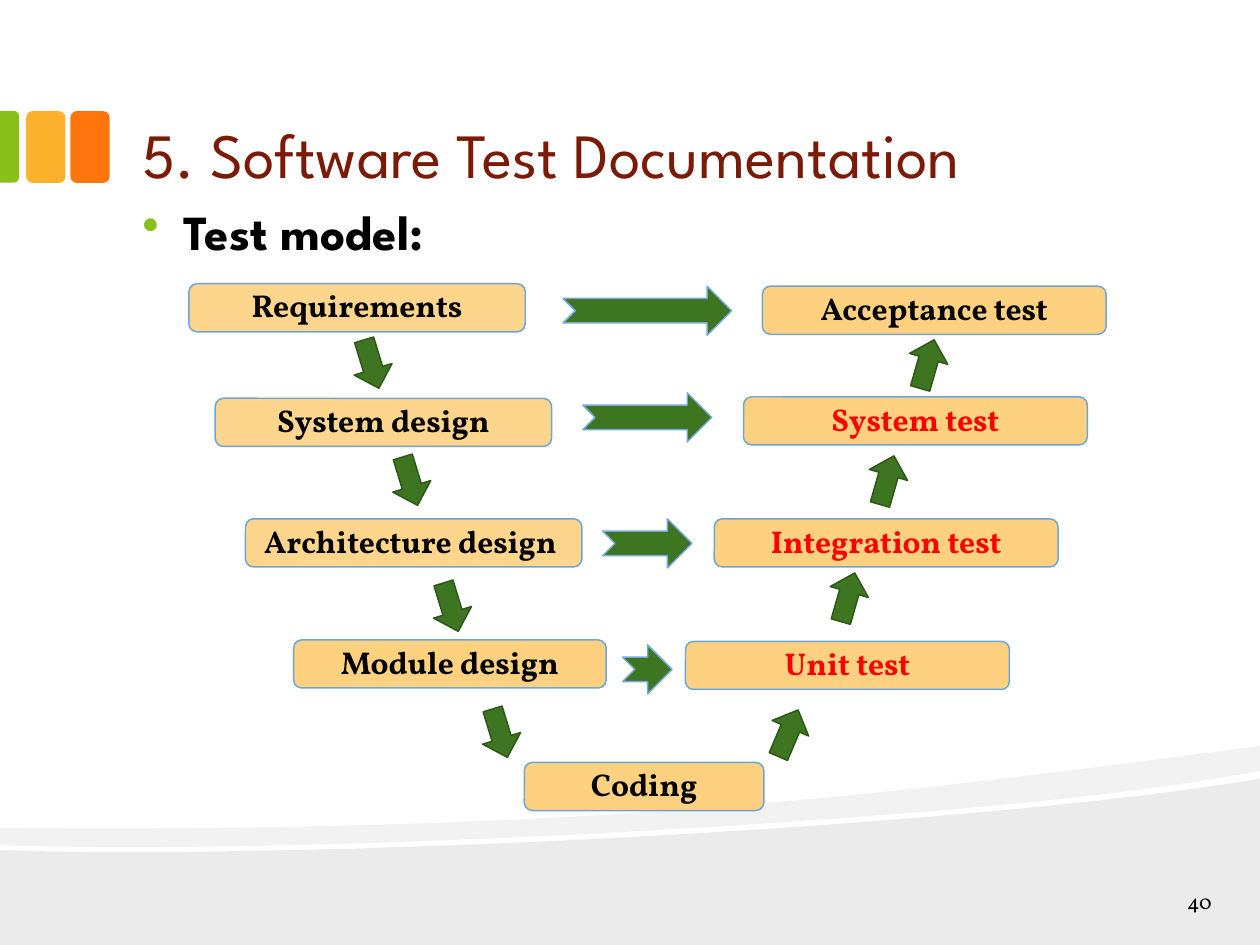
"""Build a slide with the V-shaped software test model."""
from lxml import etree
from pptx import Presentation
from pptx.dml.color import RGBColor
from pptx.enum.shapes import MSO_SHAPE
from pptx.enum.text import MSO_ANCHOR, PP_ALIGN
from pptx.oxml.ns import qn
from pptx.util import Cm, Pt

ROUND = MSO_SHAPE.ROUNDED_RECTANGLE
TAB = MSO_SHAPE.ROUND_2_SAME_RECTANGLE
DOWN = MSO_SHAPE.DOWN_ARROW
NOTCH = MSO_SHAPE.NOTCHED_RIGHT_ARROW
TOP, MIDDLE, BOTTOM = MSO_ANCHOR.TOP, MSO_ANCHOR.MIDDLE, MSO_ANCHOR.BOTTOM
LEFT, CENTER, RIGHT = PP_ALIGN.LEFT, PP_ALIGN.CENTER, PP_ALIGN.RIGHT

BLACK = RGBColor(0x00, 0x00, 0x00)
RED = RGBColor(0xFF, 0x00, 0x00)
MAROON = RGBColor(0x7A, 0x1A, 0x07)
ORANGE = RGBColor(0xFE, 0x75, 0x0E)
YELLOW = RGBColor(0xFC, 0xB2, 0x2C)
LIME = RGBColor(0x89, 0xC0, 0x1C)
SAND = RGBColor(0xFD, 0xD1, 0x80)
BLUE = RGBColor(0x6C, 0xA5, 0xD8)
SKY = RGBColor(0x74, 0xA9, 0xDA)
GREEN = RGBColor(0x3E, 0x75, 0x20)
FOREST = RGBColor(0x2E, 0x57, 0x18)

WIDE, HIGH = 25.4, 19.05
HEAD, BODY = "League Spartan", "Vollkorn"

STEPS = [
    ("Requirements", 3.81, 5.72, 6.78, 90),
    ("System design", 4.34, 8.03, 6.78, 90),
    ("Architecture design ", 4.95, 10.46, 6.78, 90),
    ("Module design", 5.92, 12.9, 6.3, 100),
    ("Coding", 10.57, 15.37, 4.83, 100),
]
TESTS = [
    ("Acceptance test", 15.37, 5.77, 6.93, BLACK),
    ("System test", 14.99, 8, 6.93, RED),
    ("Integration test", 14.4, 10.46, 6.93, RED),
    ("Unit test", 13.82, 12.93, 6.53, RED),
]
FALLS = [(7.09, 6.83), (7.87, 9.19), (8.69, 11.73), (9.68, 14.27)]
CLIMBS = [(18.29, 6.83, 196), (17.48, 9.17, 196), (16.69, 11.53, 196),
          (15.49, 14.27, 203)]
LINKS = [5.77, 7.92, 10.46, 13]


def curve(a, b, c, d, count=24):
    """Return points along a cubic curve."""
    spots = []
    for step in range(count + 1):
        t = step / count
        u = 1 - t
        spots.append(tuple(
            u**3 * p + 3 * u * u * t * q + 3 * u * t * t * r + t**3 * s
            for p, q, r, s in zip(a, b, c, d)))
    return spots


class Deck:
    """Hold the style and the current slide."""

    def __init__(self):
        self.show = Presentation()
        self.show.slide_width, self.show.slide_height = Cm(WIDE), Cm(HIGH)
        self.slide = self.show.slides.add_slide(self.show.slide_layouts[6])
        self.shapes = self.slide.shapes

    def paint(self, shape, fill, line=None, alpha=100):
        """Set fill, line and opacity, and drop the shadow."""
        shape.shadow.inherit = False
        shape.fill.solid()
        shape.fill.fore_color.rgb = fill
        if alpha < 100:
            tint = shape.element.spPr.find(qn("a:solidFill"))[0]
            etree.SubElement(tint, qn("a:alpha")).set("val", str(alpha * 1000))
        if line is None:
            shape.line.fill.background()
        else:
            shape.line.color.rgb = line
            shape.line.width = Pt(0.85)

    def wave(self, spots, alpha):
        """Draw a closed, sheer black outline."""
        first, *rest = [(Cm(x), Cm(y)) for x, y in spots]
        pen = self.shapes.build_freeform(*first, scale=1.0)
        pen.add_line_segments(rest, close=True)
        self.paint(pen.convert_to_shape(), BLACK, alpha=alpha)

    def block(self, kind, place, fill, line=None, turn=0, alpha=100):
        """Add a painted preset shape."""
        shape = self.shapes.add_shape(kind, *map(Cm, place))
        shape.rotation = turn
        self.paint(shape, fill, line, alpha)
        return shape

    def letter(self, shape, text, font, size, color, align, anchor, bold=False,
               inset=0.33):
        """Fill a shape with one styled paragraph."""
        frame = shape.text_frame
        frame.text = text
        frame.word_wrap = True
        frame.vertical_anchor = anchor
        frame.margin_left = frame.margin_right = Cm(inset)
        frame.margin_top = frame.margin_bottom = Cm(0.18)
        line = frame.paragraphs[0]
        line.alignment = align
        style = line.runs[0].font
        style.name, style.size, style.bold = font, Pt(size), bold
        style.color.rgb = color
        return line

    def label(self, place, *style, **more):
        """Add a text box."""
        return self.letter(self.shapes.add_textbox(*map(Cm, place)),
                           *style, **more)

    def bullet(self, line, color):
        """Give a paragraph a hanging bullet."""
        props = line._p.get_or_add_pPr()
        props.set("marL", str(Cm(0.84)))
        props.set("indent", str(-Cm(0.84)))
        tint = etree.SubElement(props, qn("a:buClr"))
        etree.SubElement(tint, qn("a:srgbClr")).set("val", str(color))
        etree.SubElement(props, qn("a:buChar")).set("char", "•")

    def box(self, text, x, y, width, color=BLACK, alpha=100):
        """Add a named stage of the model."""
        shape = self.block(ROUND, (x, y, width, 0.97), SAND, BLUE, alpha=alpha)
        line = self.letter(shape, text, BODY, 18, color, CENTER, MIDDLE,
                           bold=True, inset=0.18)
        line.line_spacing = 0.9


def main():
    deck = Deck()
    deck.wave([(WIDE, HIGH), (0, HIGH)]
              + curve((0, 17.14), (6.71, 17.35), (19.86, 16.64), (WIDE, 15.7)), 8)
    deck.wave(curve((0, 16.69), (12.42, 16.81), (18.49, 15.93), (WIDE, 15.04))
              + curve((WIDE, 15.54), (23.93, 15.82), (21.89, 16.08), (19.61, 16.28))
              + curve((19.61, 16.28), (13.28, 16.84), (4.9, 17.2), (0, 17.04)), 5)

    for x, color in ((1.42, ORANGE), (0.53, YELLOW)):
        deck.block(ROUND, (x, 2.24, 0.79, 1.45), color)
    tab = deck.block(TAB, (-0.53, 2.77, 1.45, 0.38), LIME, turn=90)
    tab.adjustments[0] = 0.29

    deck.label((2.54, 0.43, 20.32, 3.61), "5. Software Test Documentation",
               HEAD, 36, MAROON, LEFT, BOTTOM)
    topic = deck.label((2.54, 4.01, 20.32, 1.47), "Test model:",
                       HEAD, 28, BLACK, LEFT, TOP, bold=True)
    topic.line_spacing = 0.9
    topic.space_before = Pt(18)
    deck.bullet(topic, LIME)
    deck.label((23.06, 17.91, 1.7, 0.51), "40", BODY, 12, BLACK, RIGHT, MIDDLE)

    for text, x, y, width, color in TESTS:
        deck.box(text, x, y, width, color)
    for text, x, y, width, alpha in STEPS:
        deck.box(text, x, y, width, alpha=alpha)

    for x, y, turn in CLIMBS + [(x, y, 343) for x, y in FALLS]:
        deck.block(DOWN, (x, y, 0.8, 1.02), GREEN, FOREST, turn)
    for row, y in enumerate(LINKS):
        width = 3.4 - 0.8 * row
        deck.block(NOTCH, (13.05 - width / 2, y, width, 0.99), GREEN, SKY)

    deck.show.save("out.pptx")


if __name__ == "__main__":
    main()
